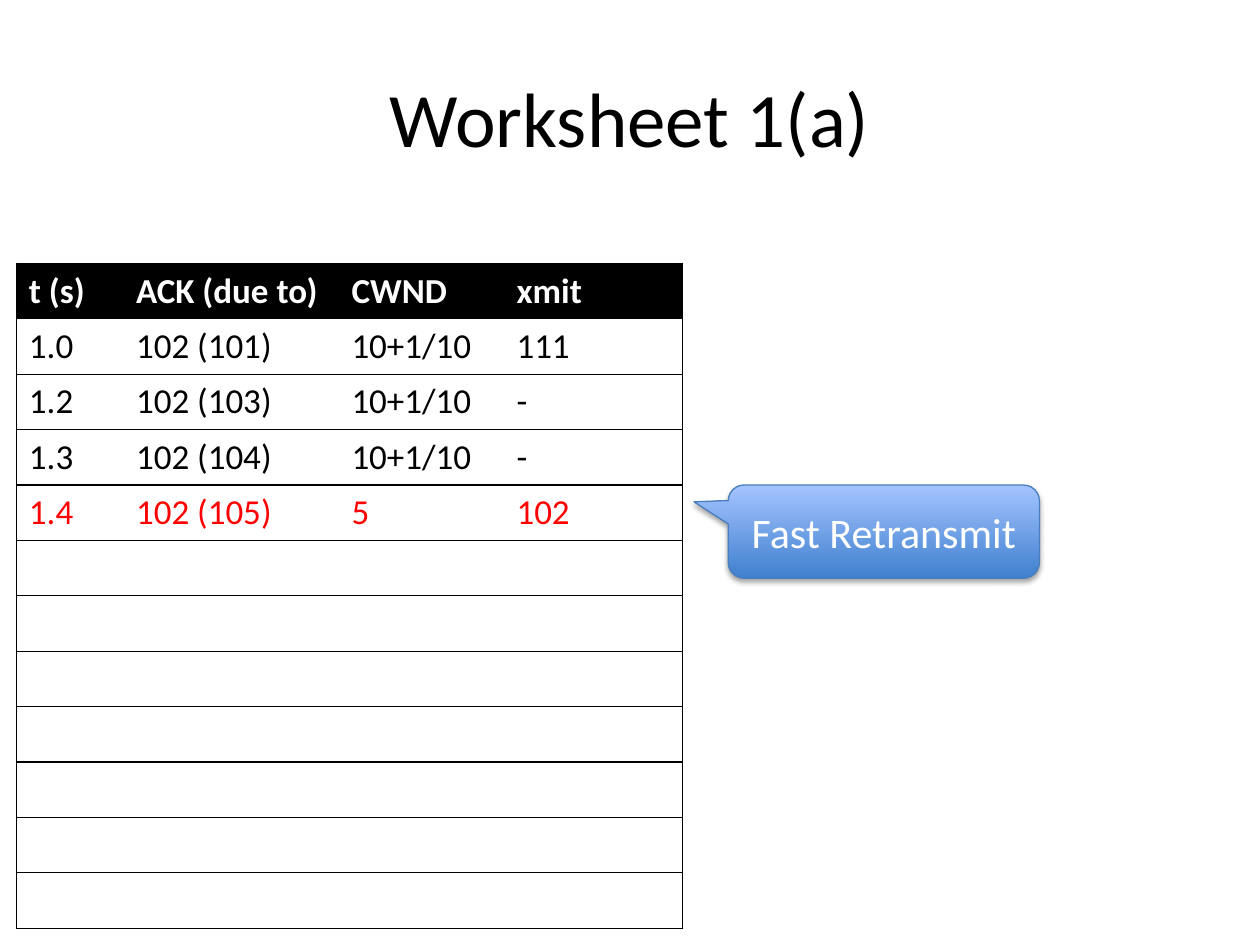
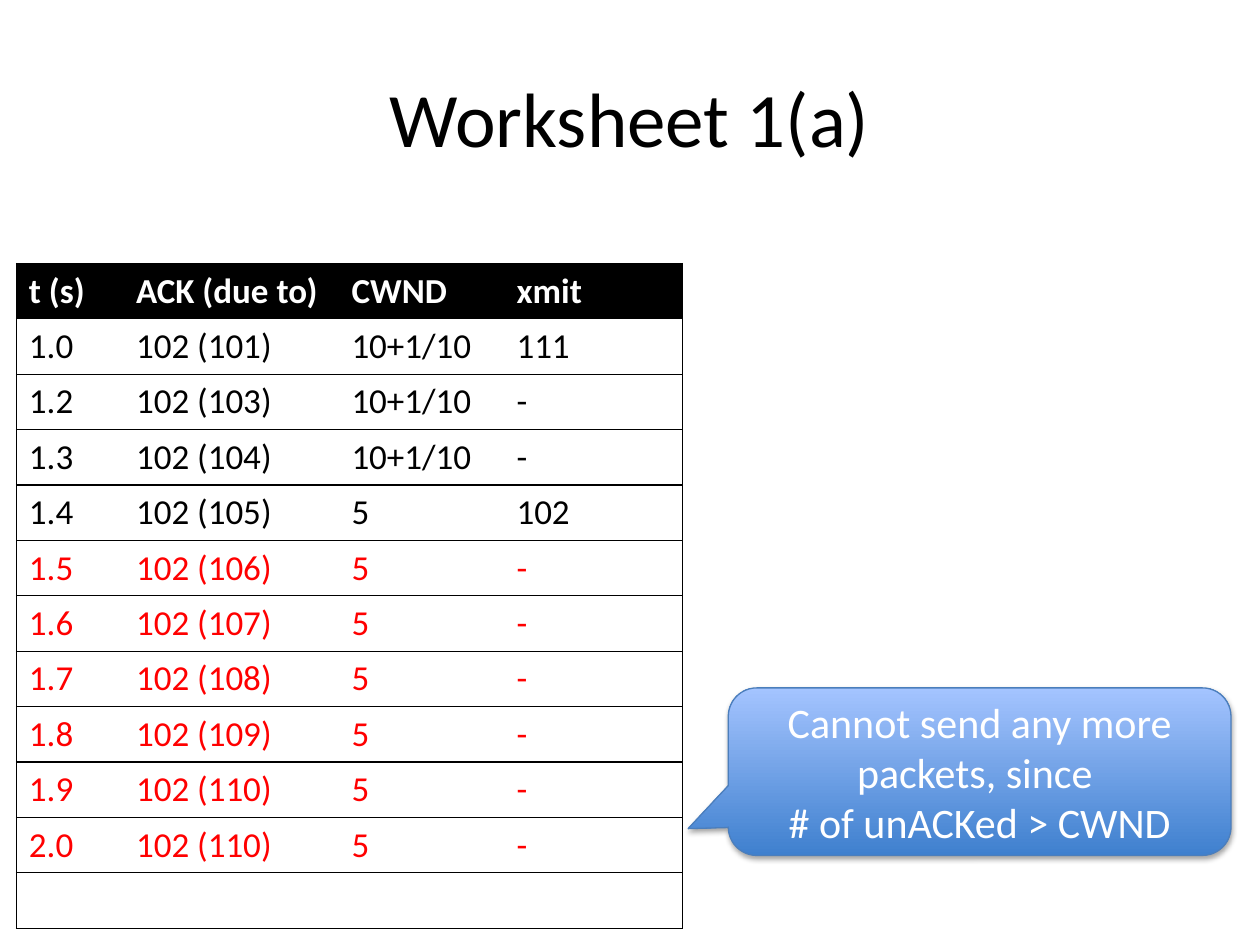
"""Build two worksheet slides that trace TCP fast retransmit."""
from dataclasses import dataclass

from lxml import etree
from pptx import Presentation
from pptx import util as u
from pptx.dml.color import RGBColor
from pptx.enum import shapes, text
from pptx.oxml import ns

FONT = "Calibri"
BLACK, WHITE, RED = "000000", "FFFFFF", "FF0000"
DEEP, PALE, EDGE = "3F80CE", "A4C4FF", "4B7EBC"
LINE = 0.75
WIDTHS = (0.85, 1.71, 1.31, 1.42)
ROW = 0.44
COUNT = 12
HEAD = ("t (s)", "ACK (due to)", "CWND", "xmit")
START = [
    ("1.0", "102 (101)", "10+1/10", "111"),
    ("1.2", "102 (103)", "10+1/10", "-"),
    ("1.3", "102 (104)", "10+1/10", "-"),
    ("1.4", "102 (105)", "5", "102"),
]
STALL = [
    (f"{1.5 + i / 10:.1f}", f"102 ({due})", "5", "-")
    for i, due in enumerate((106, 107, 108, 109, 110, 110))
]


@dataclass
class Bubble:
    """A callout: its lines, box and pointer."""
    lines: tuple[str, ...]
    box: tuple[float, float, float, float]
    tip: tuple[float, float]


@dataclass
class Step:
    """One slide: its rows, the first new row and the callout."""
    rows: list[tuple[str, ...]]
    new: int
    note: Bubble


STEPS = (
    Step(START, 3, Bubble(("Fast Retransmit",),
                          (5.78, 3.85, 2.47, 0.74), (-0.61, -0.32))),
    Step(START + STALL, 4, Bubble(
        ("Cannot send any more packets, since ", "# of unACKed > CWND"),
        (5.78, 5.46, 3.99, 1.33), (-0.58, 0.34))),
)


def paint(code: str) -> RGBColor:
    """Turn a hex string into a colour."""
    return RGBColor.from_string(code)


def add_run(para, words: str, size: float, hue: str, bold: bool = False) -> None:
    """Add one styled run."""
    run = para.add_run()
    run.text = words
    font = run.font
    font.name, font.size, font.bold = FONT, u.Pt(size), bold
    font.color.rgb = paint(hue)


def centre(frame):
    """Centre a text frame and return its first paragraph."""
    frame.word_wrap = True
    frame.vertical_anchor = text.MSO_ANCHOR.MIDDLE
    para = frame.paragraphs[0]
    para.alignment = text.PP_ALIGN.CENTER
    return para


def add_title(slide, words: str) -> None:
    """Add the slide title."""
    box = slide.shapes.add_textbox(*map(u.Inches, (0.5, 0.3, 9, 1.25)))
    add_run(centre(box.text_frame), words, 44, BLACK)


def add_edge(cell, side: str, shown: bool) -> None:
    """Draw or clear one cell border."""
    line = etree.SubElement(cell._tc.get_or_add_tcPr(), ns.qn(f"a:ln{side}"),
                            w=str(u.Pt(LINE)))
    fill = etree.SubElement(line, ns.qn("a:solidFill" if shown else "a:noFill"))
    if shown:
        etree.SubElement(fill, ns.qn("a:srgbClr"), val=BLACK)


def add_grid(slide, step: Step) -> None:
    """Add the trace table, with its new rows in red."""
    size = (0.13, 2.09, sum(WIDTHS), ROW * COUNT)
    grid = slide.shapes.add_table(COUNT, len(WIDTHS), *map(u.Inches, size)).table
    grid.horz_banding = False
    for col, width in zip(grid.columns, WIDTHS):
        col.width = u.Inches(width)
    body = [HEAD, *step.rows]
    for r in range(COUNT):
        grid.rows[r].height = u.Inches(ROW)
        hue = WHITE if r == 0 else RED if r > step.new else BLACK
        for c in range(len(WIDTHS)):
            cell = grid.cell(r, c)
            add_edge(cell, "L", c == 0)
            add_edge(cell, "R", c == len(WIDTHS) - 1)
            add_edge(cell, "T", True)
            add_edge(cell, "B", True)
            cell.fill.solid()
            cell.fill.fore_color.rgb = paint(WHITE if r else BLACK)
            if r < len(body):
                add_run(cell.text_frame.paragraphs[0], body[r][c], 20, hue, r == 0)


def add_shade(shape) -> None:
    """Give a shape a soft shadow below it."""
    shape.shadow.inherit = False
    glow = etree.SubElement(
        shape._element.spPr.find(ns.qn("a:effectLst")), ns.qn("a:outerShdw"),
        blurRad=str(u.Pt(3.1)), dist=str(u.Pt(1.8)), dir="5400000", rotWithShape="0")
    tone = etree.SubElement(glow, ns.qn("a:srgbClr"), val=BLACK)
    etree.SubElement(tone, ns.qn("a:alpha"), val="35000")


def add_note(slide, note: Bubble) -> None:
    """Add a callout that points at the table."""
    kind = shapes.MSO_SHAPE.ROUNDED_RECTANGULAR_CALLOUT
    shape = slide.shapes.add_shape(kind, *map(u.Inches, note.box))
    for i, value in enumerate((*note.tip, 0.17)):
        shape.adjustments[i] = value
    shape.fill.gradient()
    shape.fill.gradient_angle = 90
    for stop, hue in zip(shape.fill.gradient_stops, (DEEP, PALE)):
        stop.color.rgb = paint(hue)
    shape.line.color.rgb = paint(EDGE)
    shape.line.width = u.Pt(LINE)
    add_shade(shape)
    para = centre(shape.text_frame)
    for i, words in enumerate(note.lines):
        if i:
            para.add_line_break()
        add_run(para, words, 24, WHITE)


def main() -> None:
    """Build and save the deck."""
    deck = Presentation()
    deck.slide_width, deck.slide_height = u.Inches(10), u.Inches(7.5)
    for step in STEPS:
        slide = deck.slides.add_slide(deck.slide_layouts[6])
        add_title(slide, "Worksheet 1(a)")
        add_grid(slide, step)
        add_note(slide, step.note)
    deck.save("out.pptx")


if __name__ == "__main__":
    main()
